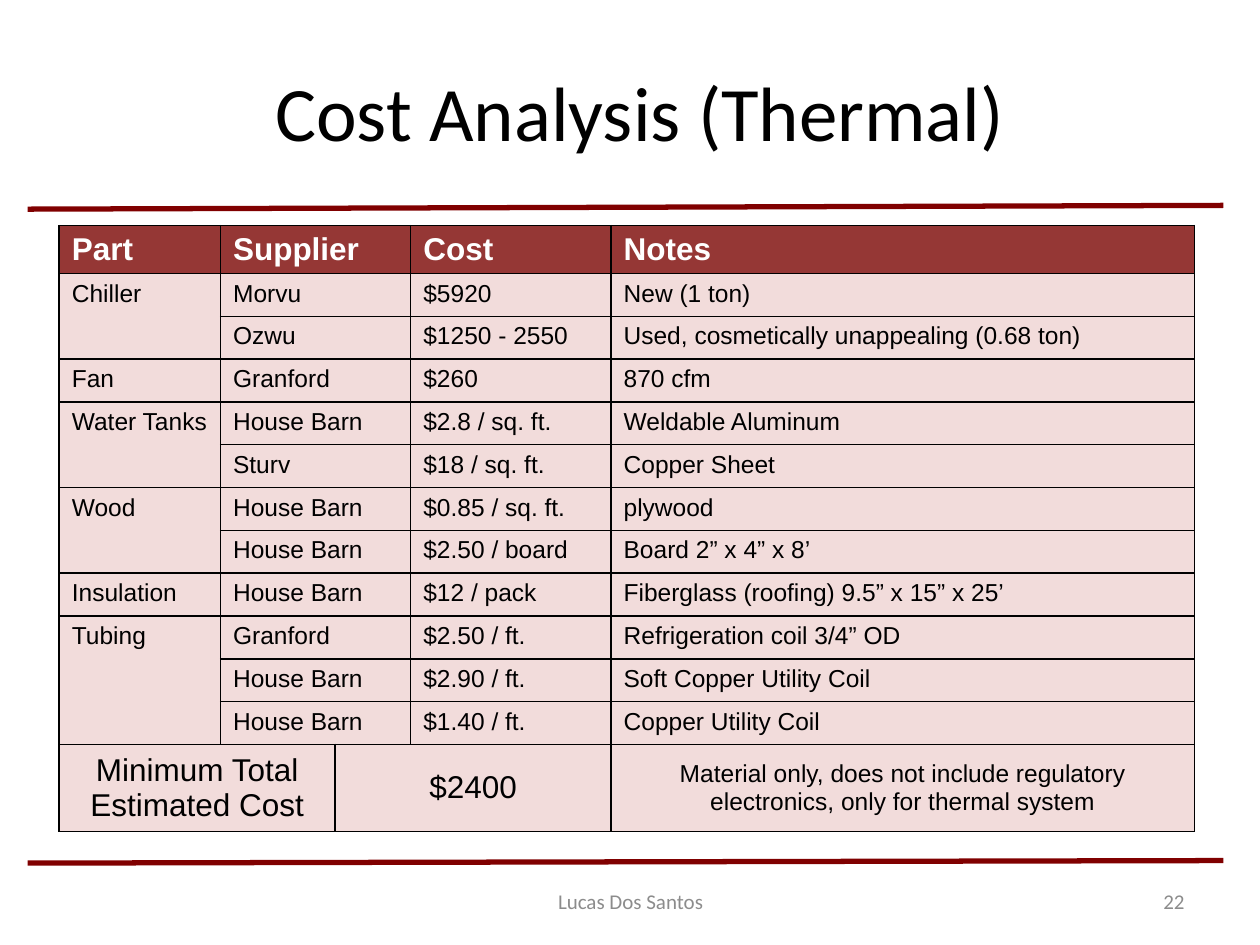
from lxml import etree
from pptx import Presentation
from pptx.dml.color import RGBColor
from pptx.enum.shapes import MSO_CONNECTOR
from pptx.enum.text import MSO_ANCHOR, PP_ALIGN
from pptx.oxml.ns import qn
from pptx.util import Inches, Pt

STRAIGHT = MSO_CONNECTOR.STRAIGHT
MIDDLE = MSO_ANCHOR.MIDDLE
CENTER, RIGHT = PP_ALIGN.CENTER, PP_ALIGN.RIGHT

BLACK = RGBColor(0x00, 0x00, 0x00)
WHITE = RGBColor(0xFF, 0xFF, 0xFF)
MAROON = RGBColor(0x80, 0x00, 0x00)
HEADER_RED = RGBColor(0x95, 0x37, 0x35)
PALE_PINK = RGBColor(0xF2, 0xDC, 0xDB)
FOOTER_GRAY = RGBColor(0x8C, 0x8C, 0x8C)

COLUMN_WIDTHS = [1.28, 0.91, 0.6, 1.59, 4.63]
ROW_HEIGHT, TOTAL_HEIGHT = 0.34, 0.69
HEADINGS = ("Part", "Supplier", "Cost", "Notes")
PARTS = [
    ("Chiller", [
        ("Morvu", "$5920", "New (1 ton)"),
        ("Ozwu", "$1250 - 2550", "Used, cosmetically unappealing (0.68 ton)"),
    ]),
    ("Fan", [("Granford", "$260", "870 cfm")]),
    ("Water Tanks", [
        ("House Barn", "$2.8 / sq. ft.", "Weldable Aluminum"),
        ("Sturv", "$18 / sq. ft.", "Copper Sheet"),
    ]),
    ("Wood", [
        ("House Barn", "$0.85 / sq. ft.", "plywood"),
        ("House Barn", "$2.50 / board", "Board 2” x 4” x 8’"),
    ]),
    ("Insulation", [
        ("House Barn", "$12 / pack", "Fiberglass (roofing) 9.5” x 15” x 25’"),
    ]),
    ("Tubing", [
        ("Granford", "$2.50 / ft.", "Refrigeration coil 3/4” OD"),
        ("House Barn", "$2.90 / ft.", "Soft Copper Utility Coil"),
        ("House Barn", "$1.40 / ft.", "Copper Utility Coil"),
    ]),
]
TOTALS = [
    (0, "Minimum Total Estimated Cost", 18),
    (2, "$2400", 18),
    (4, "Material only, does not include regulatory electronics, "
        "only for thermal system", 14),
]


def write_text(holder, text, size, font_name, color, bold=False, align=None):
    holder.text_frame.text = text
    paragraph = holder.text_frame.paragraphs[0]
    paragraph.alignment = align
    font = paragraph.runs[0].font
    font.size = Pt(size)
    font.name = font_name
    font.bold = bold
    font.color.rgb = color


def add_borders(cell):
    properties = cell._tc.get_or_add_tcPr()
    for index, side in enumerate(("lnL", "lnR", "lnT", "lnB")):
        line = etree.Element(qn(f"a:{side}"), w=str(Pt(1)))
        fill = etree.SubElement(line, qn("a:solidFill"))
        etree.SubElement(fill, qn("a:srgbClr"), val=str(BLACK))
        properties.insert(index, line)


presentation = Presentation()
presentation.slide_width = Inches(10)
presentation.slide_height = Inches(7.5)
slide = presentation.slides.add_slide(presentation.slide_layouts[5])

for start_y, end_y in ((1.66, 1.63), (6.85, 6.83)):
    rule = slide.shapes.add_connector(
        STRAIGHT, Inches(0.22), Inches(start_y), Inches(9.71), Inches(end_y))
    rule.line.color.rgb = MAROON
    rule.line.width = Pt(3)
    etree.SubElement(rule._element.spPr, qn("a:effectLst"))

title = slide.shapes.title
title.left, title.top = Inches(1.62), Inches(0.29)
title.width, title.height = Inches(6.92), Inches(1.18)
title.text_frame.vertical_anchor = MIDDLE
write_text(title, "Cost Analysis (Thermal)", 44, "Calibri", BLACK, align=CENTER)

row_count = 2 + sum(len(offers) for part, offers in PARTS)
last_row = row_count - 1
table_height = ROW_HEIGHT * last_row + TOTAL_HEIGHT
table = slide.shapes.add_table(
    row_count, len(COLUMN_WIDTHS), Inches(0.47), Inches(1.79),
    Inches(sum(COLUMN_WIDTHS)), Inches(table_height)).table
for column, width in zip(table.columns, COLUMN_WIDTHS):
    column.width = Inches(width)
for row in table.rows:
    row.height = Inches(ROW_HEIGHT)
table.rows[last_row].height = Inches(TOTAL_HEIGHT)

for row_index in range(row_count):
    for column_index in range(len(COLUMN_WIDTHS)):
        cell = table.cell(row_index, column_index)
        cell.fill.solid()
        cell.fill.fore_color.rgb = PALE_PINK if row_index else HEADER_RED
        add_borders(cell)
    if row_index < last_row:
        table.cell(row_index, 1).merge(table.cell(row_index, 2))

for column_index, heading in zip((0, 1, 3, 4), HEADINGS):
    write_text(table.cell(0, column_index), heading, 18, "Arial", WHITE, bold=True)

row_index = 1
for part, offers in PARTS:
    part_cell = table.cell(row_index, 0)
    if len(offers) > 1:
        part_cell.merge(table.cell(row_index + len(offers) - 1, 0))
    write_text(part_cell, part, 14, "Arial", BLACK)
    for offer in offers:
        for column_index, text in zip((1, 3, 4), offer):
            write_text(table.cell(row_index, column_index), text, 14, "Arial", BLACK)
        row_index += 1

for column_index, text, size in TOTALS:
    cell = table.cell(last_row, column_index)
    if column_index < 4:
        cell.merge(table.cell(last_row, column_index + 1))
    cell.vertical_anchor = MIDDLE
    write_text(cell, text, size, "Arial", BLACK, align=CENTER)

for left, width, text, align in (
        (3.42, 3.17, "Lucas Dos Santos", CENTER), (7.17, 2.33, "22", RIGHT)):
    footer = slide.shapes.add_textbox(
        Inches(left), Inches(6.95), Inches(width), Inches(0.4))
    footer.text_frame.word_wrap = True
    footer.text_frame.vertical_anchor = MIDDLE
    write_text(footer, text, 12, "Calibri", FOOTER_GRAY, align=align)

presentation.save("out.pptx")
